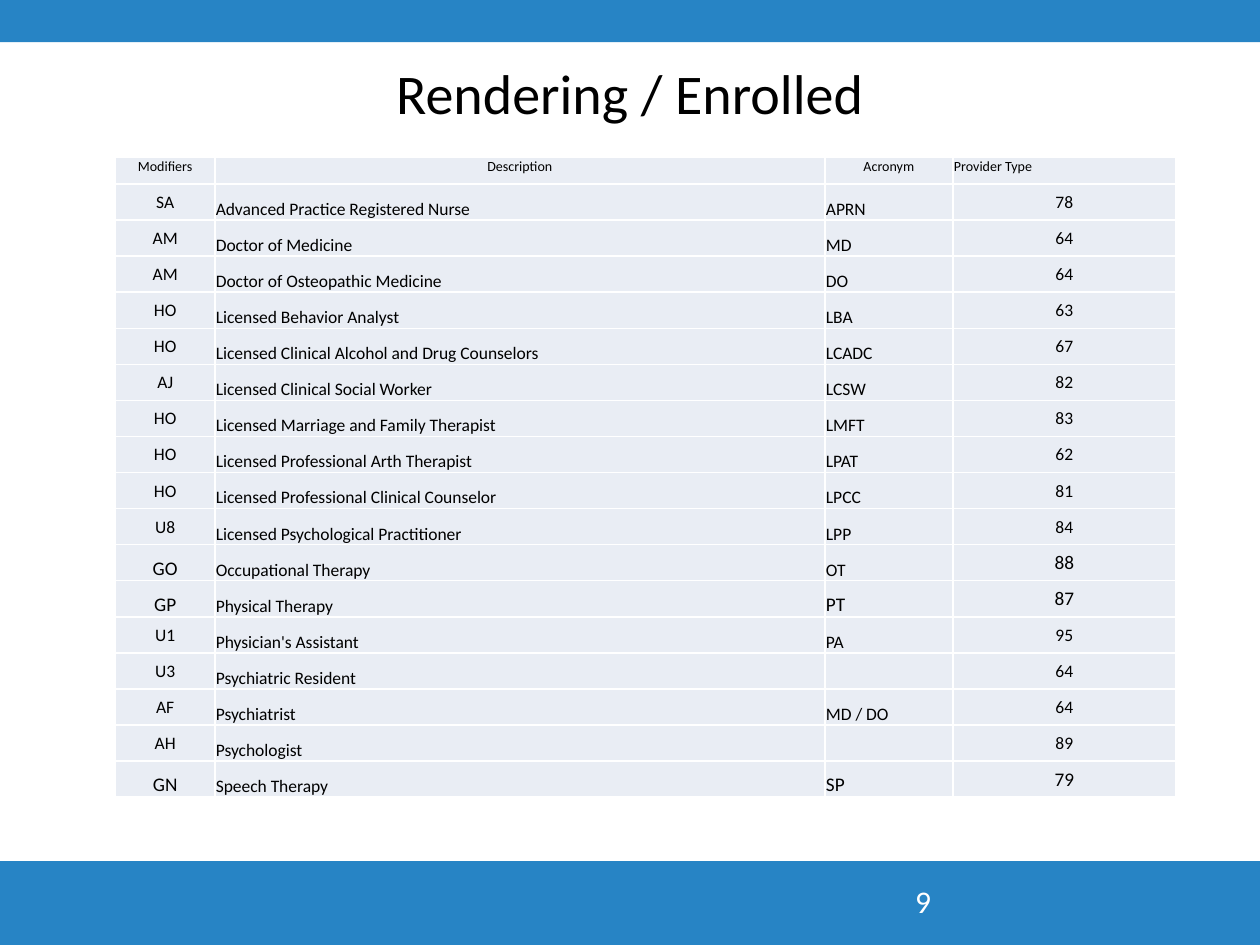
from dataclasses import dataclass

from lxml import etree
from pptx import Presentation
from pptx.dml.color import RGBColor
from pptx.enum.shapes import MSO_SHAPE
from pptx.enum.text import MSO_ANCHOR, PP_ALIGN
from pptx.oxml.ns import qn
from pptx.util import Cm, Pt

RECT = MSO_SHAPE.RECTANGLE
TOP, MIDDLE, BOTTOM = MSO_ANCHOR.TOP, MSO_ANCHOR.MIDDLE, MSO_ANCHOR.BOTTOM
LEFT, CENTER = PP_ALIGN.LEFT, PP_ALIGN.CENTER


@dataclass(frozen=True)
class Theme:
    font: str = "Calibri"
    blue: str = "2784C5"
    pale: str = "E9EDF4"
    white: str = "FFFFFF"
    black: str = "000000"
    title: int = 32
    number: int = 18
    head: int = 8
    body: int = 10
    large: int = 11


THEME = Theme()
WIDTH, HEIGHT = 25.4, 19.05
COLS = (2, 12.3, 2.58, 4.49)
HEAD_HIGH, TABLE_HIGH = 0.54, 12.9

HEADS = ("Modifiers", "Description", "Acronym", "Provider Type")
ROWS = (
    ("SA", "Advanced Practice Registered Nurse", "APRN", "78"),
    ("AM", "Doctor of Medicine", "MD", "64"),
    ("AM", "Doctor of Osteopathic Medicine", "DO", "64"),
    ("HO", "Licensed Behavior Analyst", "LBA", "63"),
    ("HO", "Licensed Clinical Alcohol and Drug Counselors", "LCADC", "67"),
    ("AJ", "Licensed Clinical Social Worker", "LCSW", "82"),
    ("HO", "Licensed Marriage and Family Therapist", "LMFT", "83"),
    ("HO", "Licensed Professional Arth Therapist", "LPAT", "62"),
    ("HO", "Licensed Professional Clinical Counselor", "LPCC", "81"),
    ("U8", "Licensed Psychological Practitioner", "LPP", "84"),
    ("GO", "Occupational Therapy", "OT", "88"),
    ("GP", "Physical Therapy", "PT", "87"),
    ("U1", "Physician's Assistant", "PA", "95"),
    ("U3", "Psychiatric Resident", "", "64"),
    ("AF", "Psychiatrist", "MD / DO", "64"),
    ("AH", "Psychologist", "", "89"),
    ("GN", "Speech Therapy", "SP", "79"),
)
# Entries set one point larger than the rest of the table
LARGE = {"GO", "88", "GP", "PT", "87", "GN", "SP", "79"}
ALIGNS = (CENTER, LEFT, LEFT, CENTER)
ANCHORS = (MIDDLE, BOTTOM, BOTTOM, MIDDLE)


def put_text(frame, text, size, color=THEME.black, align=LEFT):
    para = frame.paragraphs[0]
    para.alignment = align
    if not text:
        # The end mark keeps an empty cell from stretching its row
        etree.SubElement(para._p, qn("a:endParaRPr"), sz=str(size * 100))
        return
    run = para.add_run()
    run.text = text
    run.font.name = THEME.font
    run.font.size = Pt(size)
    run.font.color.rgb = RGBColor.from_string(color)


def add_band(slide, top, high):
    band = slide.shapes.add_shape(RECT, 0, Cm(top), Cm(WIDTH), Cm(high))
    band.shadow.inherit = False
    band.fill.solid()
    band.fill.fore_color.rgb = RGBColor.from_string(THEME.blue)
    band.line.fill.background()


def add_label(slide, text, left, top, wide, high, anchor=TOP, **style):
    box = slide.shapes.add_textbox(Cm(left), Cm(top), Cm(wide), Cm(high))
    frame = box.text_frame
    frame.word_wrap = True
    frame.vertical_anchor = anchor
    put_text(frame, text, **style)


def add_edges(cell):
    """Draw a thin white line on all four sides of a cell."""
    props = cell._tc.get_or_add_tcPr()
    for side in ("lnL", "lnR", "lnT", "lnB"):
        line = etree.SubElement(props, qn(f"a:{side}"), w=str(Pt(1)))
        fill = etree.SubElement(line, qn("a:solidFill"))
        etree.SubElement(fill, qn("a:srgbClr"), val=THEME.white)


def fill_cell(cell, text, anchor, **style):
    cell.margin_left = cell.margin_right = cell.margin_top = Cm(0.02)
    cell.margin_bottom = 0
    cell.vertical_anchor = anchor
    add_edges(cell)
    cell.fill.solid()
    cell.fill.fore_color.rgb = RGBColor.from_string(THEME.pale)
    put_text(cell.text_frame, text, **style)


def add_grid(slide, left, top):
    frame = slide.shapes.add_table(
        len(ROWS) + 1, len(COLS), Cm(left), Cm(top), Cm(sum(COLS)), Cm(TABLE_HIGH)
    )
    table = frame.table
    table.first_row = table.horz_banding = False
    for col, wide in zip(table.columns, COLS):
        col.width = Cm(wide)
    for row in table.rows:
        row.height = Cm((TABLE_HIGH - HEAD_HIGH) / len(ROWS))
    table.rows[0].height = Cm(HEAD_HIGH)

    for c, text in enumerate(HEADS):
        align = LEFT if c == len(HEADS) - 1 else CENTER
        fill_cell(table.cell(0, c), text, TOP, size=THEME.head, align=align)
    for r, row in enumerate(ROWS, 1):
        for c, text in enumerate(row):
            big = text in LARGE
            anchor = BOTTOM if big and c == 0 else ANCHORS[c]
            size = THEME.large if big else THEME.body
            fill_cell(table.cell(r, c), text, anchor, size=size, align=ALIGNS[c])


def main():
    deck = Presentation()
    deck.slide_width, deck.slide_height = Cm(WIDTH), Cm(HEIGHT)
    slide = deck.slides.add_slide(deck.slide_layouts[6])
    add_band(slide, 0, 0.85)
    add_band(slide, 17.36, HEIGHT - 17.36)
    add_label(slide, "Rendering / Enrolled", 1.27, 1.06, 22.86, 1.59,
              anchor=MIDDLE, size=THEME.title, align=CENTER)
    add_label(slide, "9", 18.2, 17.66, 5.93, 1.01,
              size=THEME.number, color=THEME.white)
    add_grid(slide, 2.33, 3.17)
    deck.save("out.pptx")


if __name__ == "__main__":
    main()
